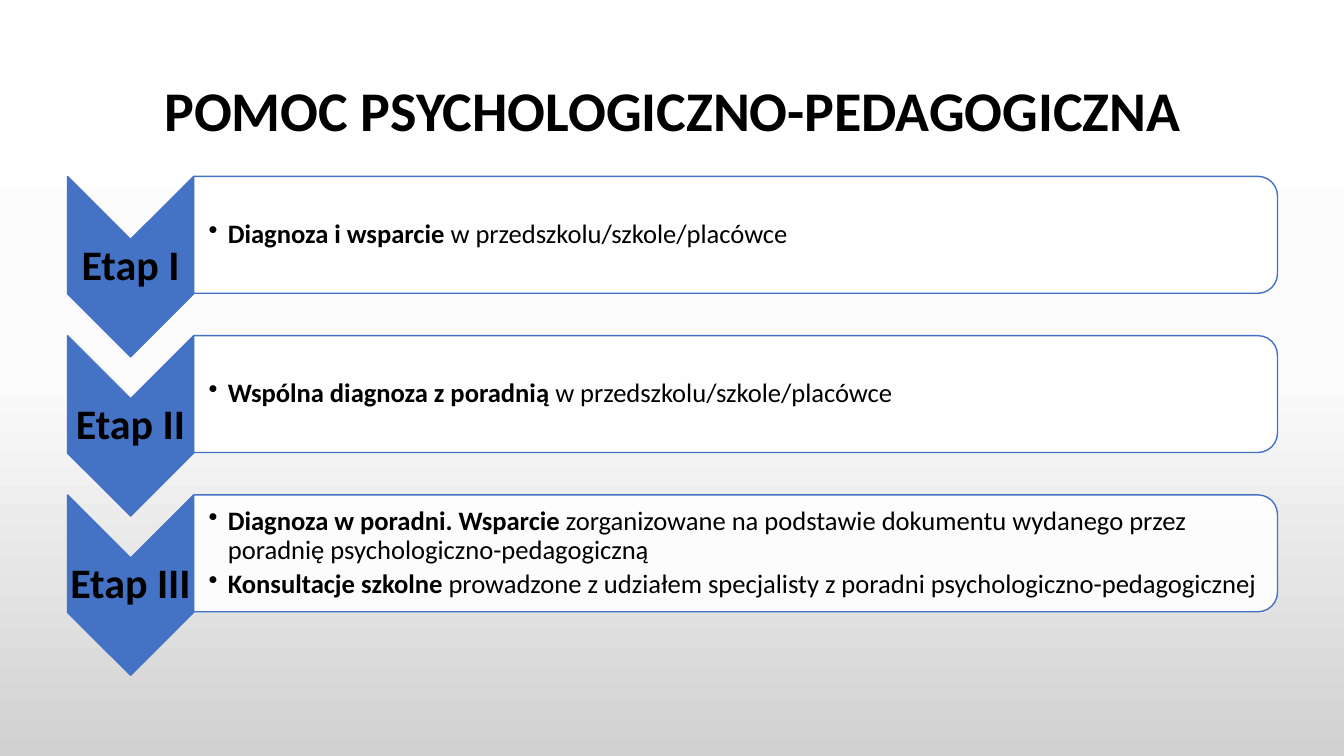
from copy import deepcopy

from lxml import etree
from pptx import Presentation
from pptx.dml.color import RGBColor
from pptx.enum.shapes import MSO_SHAPE as Preset
from pptx.enum.text import MSO_ANCHOR as Anchor, PP_ALIGN as Align
from pptx.oxml.ns import qn
from pptx.util import Inches, Pt

FONT = "Calibri"
BLACK = RGBColor(0x00, 0x00, 0x00)
WHITE = RGBColor(0xFF, 0xFF, 0xFF)
BLUE = RGBColor(0x44, 0x72, 0xC4)
BACKGROUND = [(0, WHITE), (0.5, RGBColor(0xFB, 0xFB, 0xFB)), (1, RGBColor(0xD1, 0xD1, 0xD1))]

# Stage grid, in inches
LEFT, TOP, PITCH = 0.67, 1.75, 1.58
CHEVRON_WIDTH, CHEVRON_HEIGHT = 1.25, 1.79
PANEL_WIDTH, PANEL_HEIGHT = 10.75, 1.16
LIST_WIDTH, LIST_HEIGHT = 10.69, 1.05
LABEL_HEIGHT = 0.54
BULLET_INDENT = Inches(0.19)

TITLE = "POMOC PSYCHOLOGICZNO-PEDAGOGICZNA"
# Each stage: label and bullets, a bullet being its bold and its regular part
STAGES = [
    ("Etap I", [("Diagnoza i wsparcie ", "w przedszkolu/szkole/placówce")]),
    ("Etap II", [("Wspólna diagnoza z poradnią ", "w przedszkolu/szkole/placówce")]),
    ("Etap III", [
        ("Diagnoza w poradni. Wsparcie",
         " zorganizowane na podstawie dokumentu wydanego przez "
         "poradnię psychologiczno-pedagogiczną"),
        ("Konsultacje szkolne ",
         "prowadzone z udziałem specjalisty z poradni psychologiczno-pedagogicznej"),
    ]),
]


def paint_background(slide):
    fill = slide.background.fill
    fill.gradient()
    fill.gradient_angle = 270
    first_stop = slide.element.xpath(".//a:gs")[0]
    first_stop.addnext(deepcopy(first_stop))
    for stop, (position, color) in zip(fill.gradient_stops, BACKGROUND):
        stop.position = position
        stop.color.rgb = color


def format_paragraph(paragraph, size, bold=None):
    paragraph.line_spacing = 0.9
    font = paragraph.font
    font.name, font.size, font.bold = FONT, Pt(size), bold
    font.color.rgb = BLACK


def add_title(slide, left, top, width, height):
    title = slide.shapes.title
    title.left, title.top, title.width, title.height = map(Inches, (left, top, width, height))
    title.text_frame.text = TITLE
    title.text_frame.vertical_anchor = Anchor.MIDDLE
    paragraph = title.text_frame.paragraphs[0]
    paragraph.alignment = Align.CENTER
    format_paragraph(paragraph, 40, bold=True)


def add_turned_shape(slide, preset, left, top, width, height, color):
    """Add a shape turned by 90 degrees that covers the given box."""
    shape = slide.shapes.add_shape(
        preset, Inches(left + (width - height) / 2), Inches(top + (height - width) / 2),
        Inches(height), Inches(width))
    shape.rotation = 90
    shape.shadow.inherit = False
    shape.fill.solid()
    shape.fill.fore_color.rgb = color
    shape.line.color.rgb = BLUE
    shape.line.width = Pt(1)
    return shape


def add_text_frame(slide, left, top, width, height, left_margin, margin):
    frame = slide.shapes.add_textbox(*map(Inches, (left, top, width, height))).text_frame
    frame.word_wrap = True
    frame.vertical_anchor = Anchor.MIDDLE
    frame.margin_left = Inches(left_margin)
    frame.margin_top = frame.margin_right = frame.margin_bottom = Inches(margin)
    return frame


def add_chevron(slide, left, top, label):
    add_turned_shape(slide, Preset.CHEVRON, left, top, CHEVRON_WIDTH, CHEVRON_HEIGHT, BLUE)
    label_top = top + (CHEVRON_HEIGHT - LABEL_HEIGHT) / 2
    frame = add_text_frame(slide, left, label_top, CHEVRON_WIDTH, LABEL_HEIGHT, 0.02, 0.02)
    frame.text = label
    paragraph = frame.paragraphs[0]
    paragraph.alignment = Align.CENTER
    format_paragraph(paragraph, 30, bold=True)


def add_bullet(paragraph, bold_text, regular_text):
    for text, bold in ((bold_text, True), (regular_text, False)):
        run = paragraph.add_run()
        run.text = text
        run.font.bold = bold
    format_paragraph(paragraph, 19)
    paragraph.space_after = Pt(3.5)
    properties = paragraph._p.get_or_add_pPr()
    properties.set("marL", str(BULLET_INDENT))
    properties.set("indent", str(-BULLET_INDENT))
    bullet = etree.Element(qn("a:buChar"), char="•")
    properties.find(qn("a:spcAft")).addnext(bullet)


def add_panel(slide, left, top, bullets):
    panel = add_turned_shape(
        slide, Preset.ROUND_2_SAME_RECTANGLE, left, top, PANEL_WIDTH, PANEL_HEIGHT, WHITE)
    color = panel.fill._xPr.find(qn("a:solidFill"))[0]
    etree.SubElement(color, qn("a:alpha"), val="90000")
    list_top = top + (PANEL_HEIGHT - LIST_HEIGHT) / 2
    frame = add_text_frame(slide, left, list_top, LIST_WIDTH, LIST_HEIGHT, 0.15, 0.01)
    for index, bullet in enumerate(bullets):
        paragraph = frame.add_paragraph() if index else frame.paragraphs[0]
        add_bullet(paragraph, *bullet)


def main():
    presentation = Presentation()
    presentation.slide_width, presentation.slide_height = Inches(13.33), Inches(7.5)
    slide = presentation.slides.add_slide(presentation.slide_layouts.get_by_name("Title Only"))
    paint_background(slide)
    add_title(slide, 0.92, 0.4, 11.5, 1.45)
    for row, (label, bullets) in enumerate(STAGES):
        top = TOP + row * PITCH
        add_chevron(slide, LEFT, top, label)
        add_panel(slide, LEFT + CHEVRON_WIDTH, top, bullets)
    presentation.save("out.pptx")


if __name__ == "__main__":
    main()
